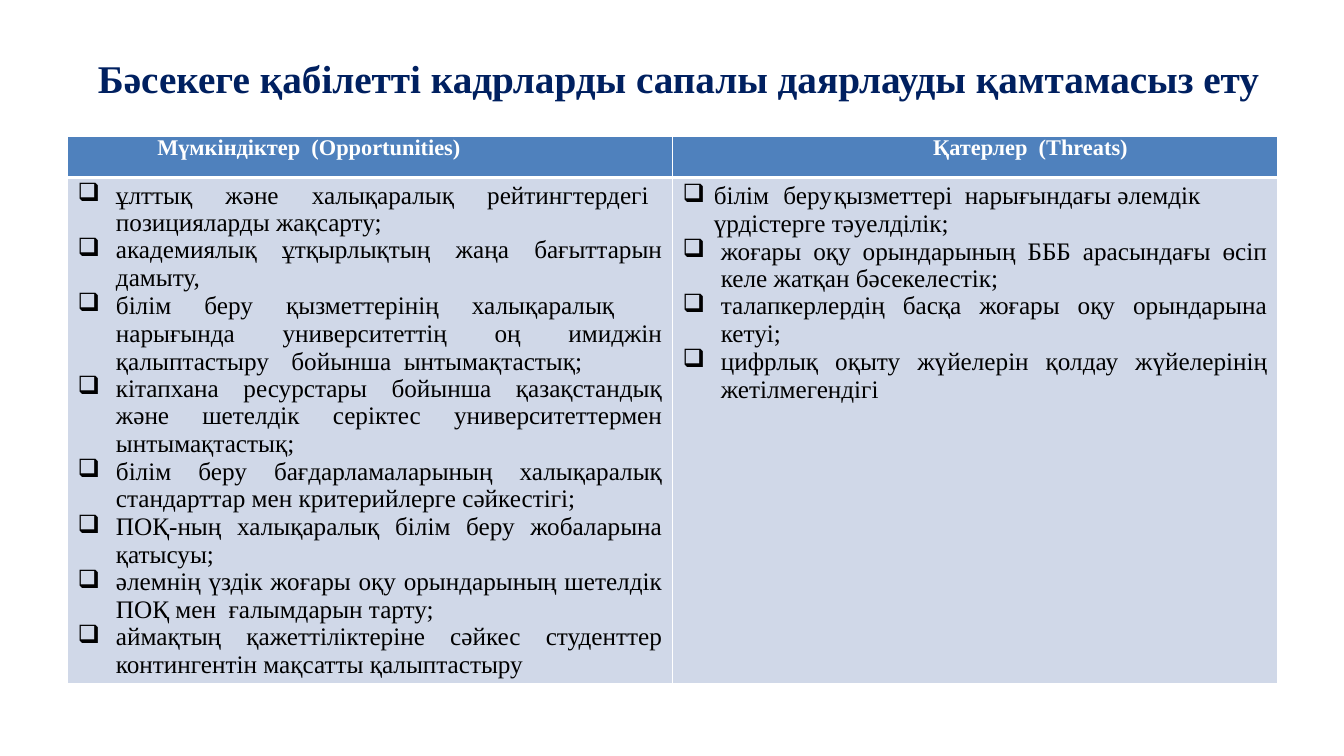
from lxml.etree import SubElement
from pptx import Presentation
from pptx.dml.color import RGBColor
from pptx.enum.text import MSO_ANCHOR, MSO_AUTO_SIZE, PP_ALIGN
from pptx.oxml.ns import qn
from pptx.util import Inches, Pt

COLORS = {"navy": "002060", "header": "4F81BD", "body": "D0D8E8", "white": "FFFFFF", "black": "000000"}
FONT = "Times New Roman"
TITLE_FONT = {"name": FONT, "size": Pt(28), "bold": True}
HEADER_FONT = {"name": FONT, "size": Pt(16), "bold": True}
BODY_FONT = {"name": FONT, "size": Pt(18), "bold": False}
NO_MARGINS = {"margin_left": 0, "margin_right": 0, "margin_top": 0, "margin_bottom": 0}

TITLE = "Бәсекеге қабілетті кадрларды сапалы даярлауды қамтамасыз ету"
# Header: text, alignment, left margin, first-line indent
HEADERS = [
    ("Мүмкіндіктер  (Opportunities)", PP_ALIGN.LEFT, 0.91, -0.02),
    ("Қатерлер  (Threats)", PP_ALIGN.CENTER, 1.1, 0),
]
# Bullet: text, alignment, hanging indent, line spacing, tab stops
JUSTIFY = PP_ALIGN.JUSTIFY
OPPORTUNITIES = [
    ("ұлттық және халықаралық рейтингтердегі\tпозицияларды жақсарту;", JUSTIFY, 0.38, 0.98, (0.39, 1.76)),
    ("академиялық ұтқырлықтың жаңа бағыттарын дамыту, ", JUSTIFY, 0.38, 0.98, (0.39, 1.76)),
    ("білім беру қызметтерінің халықаралық\tнарығында университеттің оң имиджін "
     "қалыптастыру\t\tбойынша  ынтымақтастық;", JUSTIFY, 0.38, 1.0, (0.39, 1.99, 2.12)),
    ("кітапхана ресурстары бойынша қазақстандық және шетелдік серіктес "
     "университеттермен ынтымақтастық;", JUSTIFY, 0.38, 0.98, (0.39,)),
    ("білім беру бағдарламаларының халықаралық стандарттар мен критерийлерге сәйкестігі;",
     JUSTIFY, 0.38, 1.0, (0.39, 1.6, 2.45)),
    ("ПОҚ-ның халықаралық білім беру жобаларына қатысуы;", JUSTIFY, 0.38, 1.0, (0.39,)),
    ("әлемнің үздік жоғары оқу орындарының шетелдік ПОҚ мен  ғалымдарын тарту;",
     JUSTIFY, 0.38, 0.98, (0.39,)),
    ("аймақтың қажеттіліктеріне сәйкес студенттер контингентін мақсатты қалыптастыру",
     JUSTIFY, 0.38, 0.98, (0.39,)),
]
THREATS = [
    ("білім\tберу\tқызметтері  нарығындағы әлемдік үрдістерге тәуелділік;",
     PP_ALIGN.LEFT, 0.31, 1.0, ()),
    ("жоғары оқу орындарының БББ арасындағы өсіп келе жатқан бәсекелестік;",
     JUSTIFY, 0.38, 0.98, (0.3,)),
    ("талапкерлердің басқа жоғары оқу орындарына кетуі;", JUSTIFY, 0.38, 0.98, (0.3,)),
    ("цифрлық оқыту жүйелерін қолдау жүйелерінің жетілмегендігі", JUSTIFY, 0.38, 1.0, (0.3,)),
]


def set_all(target, values):
    for name, value in values.items():
        setattr(target, name, value)


def write(para, text, font, color):
    span = para.add_run()
    span.text = text
    set_all(span.font, font)
    span.font.color.rgb = RGBColor.from_string(COLORS[color])


def indent(para, left, first):
    properties = para._p.get_or_add_pPr()
    properties.set("marL", str(Inches(left)))
    properties.set("indent", str(Inches(first)))
    return properties


def add_bullet(para, hanging, tabs):
    properties = indent(para, hanging, -hanging)
    SubElement(properties, qn("a:buChar"), char="❑")
    if tabs:
        stops = SubElement(properties, qn("a:tabLst"))
        for tab in tabs:
            SubElement(stops, qn("a:tab"), pos=str(Inches(tab)), algn="l")


def style_cell(cell, fill, bottom_width):
    """Draw white borders, then fill the cell."""
    properties = cell._tc.get_or_add_tcPr()
    for side, width in (("L", 1), ("R", 1), ("T", 1), ("B", bottom_width)):
        line = SubElement(properties, qn(f"a:ln{side}"), w=str(Pt(width)))
        solid = SubElement(line, qn("a:solidFill"))
        SubElement(solid, qn("a:srgbClr"), val=COLORS["white"])
    cell.fill.solid()
    cell.fill.fore_color.rgb = RGBColor.from_string(COLORS[fill])
    cell.vertical_anchor = MSO_ANCHOR.TOP


def add_title(page, left, top, width, height):
    title = page.shapes.title
    set_all(title, {"left": left, "top": top, "width": width, "height": height})
    set_all(title.text_frame, {"word_wrap": True, "auto_size": MSO_AUTO_SIZE.NONE,
                               "vertical_anchor": MSO_ANCHOR.MIDDLE})
    para = title.text_frame.paragraphs[0]
    para.alignment = PP_ALIGN.CENTER
    indent(para, 0.07, 0)
    write(para, TITLE, TITLE_FONT, "navy")


def fill_header(cell, text, alignment, left, first):
    style_cell(cell, "header", 3)
    set_all(cell, NO_MARGINS)
    para = cell.text_frame.paragraphs[0]
    set_all(para, {"alignment": alignment, "line_spacing": 0.97})
    indent(para, left, first)
    write(para, text, HEADER_FONT, "white")


def fill_list(cell, bullets):
    style_cell(cell, "body", 1)
    frame = cell.text_frame
    for index, (text, alignment, hanging, spacing, tabs) in enumerate(bullets):
        para = frame.add_paragraph() if index else frame.paragraphs[0]
        add_bullet(para, hanging, tabs)
        set_all(para, {"alignment": alignment, "line_spacing": spacing})
        write(para, text, BODY_FONT, "black")


def add_swot_table(page, left, top, width, height):
    table = page.shapes.add_table(2, 2, left, top, width, height).table
    table.horz_banding = False
    header_height = Inches(0.41)
    table.rows[0].height = header_height
    table.rows[1].height = height - header_height
    for column, (header, bullets) in enumerate(zip(HEADERS, (OPPORTUNITIES, THREATS))):
        fill_header(table.cell(0, column), *header)
        fill_list(table.cell(1, column), bullets)


def main():
    deck = Presentation()
    deck.slide_width, deck.slide_height = Inches(13.33), Inches(7.5)
    page = deck.slides.add_slide(deck.slide_layouts.get_by_name("Title Only"))
    add_title(page, Inches(0.72), Inches(0.49), Inches(11.95), Inches(0.57))
    add_swot_table(page, Inches(0.67), Inches(1.35), Inches(12), Inches(5.42))
    deck.save("out.pptx")


if __name__ == "__main__":
    main()
